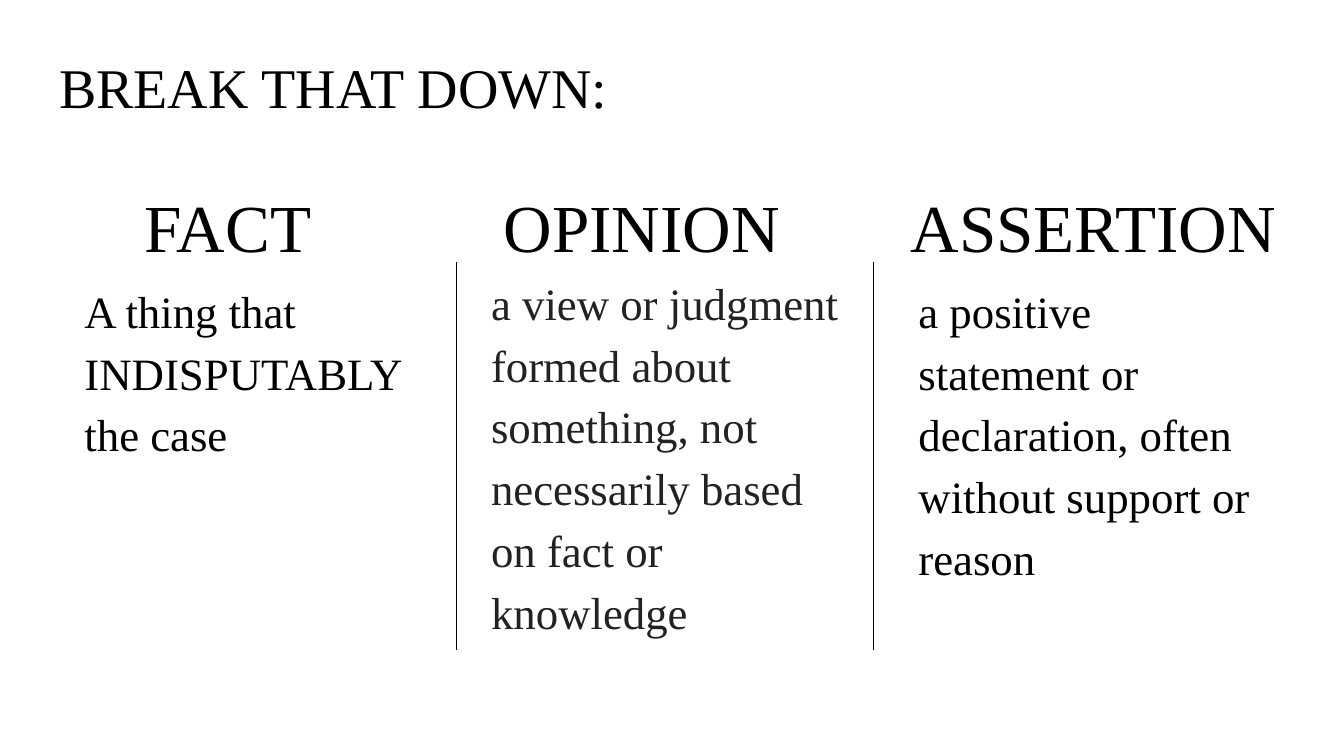
from pptx import Presentation
from pptx.dml.color import RGBColor
from pptx.enum.shapes import MSO_CONNECTOR as Connector
from pptx.enum.text import MSO_ANCHOR as Anchor, MSO_AUTO_SIZE as AutoSize, PP_ALIGN as Align
from pptx.oxml.ns import qn
from pptx.util import Pt
from lxml.etree import SubElement

PX = 4572
BLACK = RGBColor(0x00, 0x00, 0x00)
CHARCOAL = RGBColor(0x22, 0x22, 0x22)
FONT = "Times New Roman"
SLIDE_SIZE = (2000, 1125)
TITLE_BOX = (68, 58, 1864, 126)
INSET = 20
HEADING_TOP, HEADING_HEIGHT = 238, 184
DEFINITION_WIDTH, DEFINITION_HEIGHT = 558, 600
DIVIDER_TOP, DIVIDER_HEIGHT = 390, 578

COLUMNS = [
    ("FACT", (115, 448), "A thing that INDISPUTABLY the case", (106, 390), BLACK),
    ("OPINION", (628, 654),
     "a view or judgment formed about something, not necessarily based on fact or knowledge",
     (711, 378), CHARCOAL),
    ("ASSERTION", (1300, 654),
     "a positive statement or declaration, often without support or reason",
     (1347, 390), BLACK),
]
DIVIDER_LEFTS = (679, 1300)


def emu(*lengths):
    return [length * PX for length in lengths]


def apply(target, values):
    for name, value in values.items():
        setattr(target, name, value)


def write_text(holder, text, size, color, align=Align.LEFT, line_spacing=1.15, space_after=16):
    frame = holder.text_frame
    inset = INSET * PX
    apply(frame, {
        "word_wrap": True, "auto_size": AutoSize.NONE, "vertical_anchor": Anchor.TOP,
        "margin_left": inset, "margin_right": inset,
        "margin_top": inset, "margin_bottom": inset,
    })
    frame.text = text
    paragraph = frame.paragraphs[0]
    apply(paragraph, {
        "alignment": align, "line_spacing": line_spacing, "space_after": Pt(space_after),
    })
    font = paragraph.runs[0].font
    apply(font, {"name": FONT, "size": Pt(size)})
    font.color.rgb = color


def place_title(slide, box):
    title = slide.shapes.title
    apply(title, dict(zip(("left", "top", "width", "height"), emu(*box))))
    write_text(title, "BREAK THAT DOWN:", 30, BLACK, line_spacing=1.0, space_after=0)


def add_column(slide, heading, heading_span, definition, definition_corner, color):
    left, width = heading_span
    heading_text = slide.shapes.add_textbox(*emu(left, HEADING_TOP, width, HEADING_HEIGHT))
    write_text(heading_text, heading, 36, BLACK, Align.CENTER)
    definition_text = slide.shapes.add_textbox(
        *emu(*definition_corner, DEFINITION_WIDTH, DEFINITION_HEIGHT))
    write_text(definition_text, definition, 24, color)


def add_divider(slide, left, top, height):
    divider = slide.shapes.add_connector(
        Connector.STRAIGHT, *emu(left, top, left, top + height))
    divider.line.color.rgb = BLACK
    divider.line.width = Pt(0.75)
    SubElement(divider.element.spPr, qn("a:effectLst"))


def main():
    deck = Presentation()
    apply(deck, dict(zip(("slide_width", "slide_height"), emu(*SLIDE_SIZE))))
    slide = deck.slides.add_slide(deck.slide_layouts[5])
    place_title(slide, TITLE_BOX)
    for column in COLUMNS:
        add_column(slide, *column)
    for left in DIVIDER_LEFTS:
        add_divider(slide, left, DIVIDER_TOP, DIVIDER_HEIGHT)
    deck.save("out.pptx")


if __name__ == "__main__":
    main()
